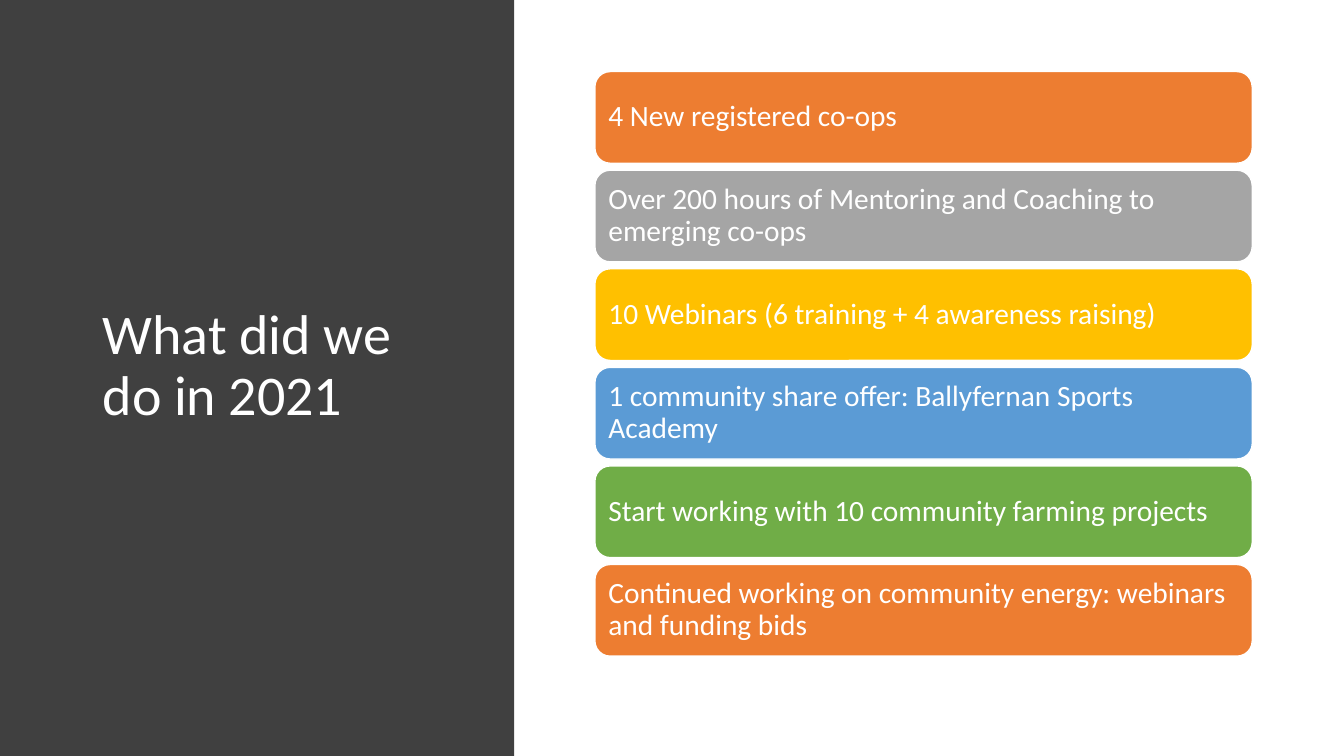
from pptx import Presentation
from pptx import util as u
from pptx.dml.color import RGBColor
from pptx.enum import shapes, text

PX = u.Inches(1) // 100

WHITE = RGBColor(0xFF, 0xFF, 0xFF)
CHARCOAL = RGBColor(0x40, 0x40, 0x40)
ORANGE = RGBColor(0xED, 0x7D, 0x31)
GREY = RGBColor(0xA5, 0xA5, 0xA5)
GOLD = RGBColor(0xFF, 0xC0, 0x00)
BLUE = RGBColor(0x5B, 0x9B, 0xD5)
GREEN = RGBColor(0x70, 0xAD, 0x47)

ACHIEVEMENTS = [
    ("4 New registered co-ops", ORANGE),
    ("Over 200 hours of Mentoring and Coaching to emerging co-ops", GREY),
    ("10 Webinars (6 training + 4 awareness raising)", GOLD),
    ("1 community share offer: Ballyfernan Sports Academy", BLUE),
    ("Start working with 10 community farming projects", GREEN),
    ("Continued working on community energy: webinars and funding bids", ORANGE),
]


def px(*lengths):
    return [round(length * PX) for length in lengths]


def add_block(slide, kind, box, color):
    shape = slide.shapes.add_shape(kind, *px(*box))
    shape.shadow.inherit = False
    shape.fill.solid()
    shape.fill.fore_color.rgb = color
    shape.line.fill.background()
    return shape


def write(shape, wording, size):
    frame = shape.text_frame
    frame.word_wrap = True
    frame.vertical_anchor = text.MSO_ANCHOR.MIDDLE
    paragraph = frame.paragraphs[0]
    paragraph.text = wording
    paragraph.alignment = text.PP_ALIGN.LEFT
    paragraph.line_spacing = 0.9
    paragraph.font.name = "Calibri"
    paragraph.font.size = u.Pt(size)
    paragraph.font.color.rgb = WHITE
    return frame


def title_panel(slide, box):
    left, top, width, height = box
    add_block(slide, shapes.MSO_SHAPE.RECTANGLE, box, CHARCOAL)
    title = slide.shapes.add_textbox(*px(left + 92, top + 68, width - 143, height - 158))
    write(title, "What did we do in 2021", 40)


def achievement_cards(slide, box):
    left, top, width, height = box
    card_height = 91
    pitch = (height - card_height) / (len(ACHIEVEMENTS) - 1)
    for index, (wording, color) in enumerate(ACHIEVEMENTS):
        card_box = (left, top + index * pitch, width, card_height)
        card = add_block(slide, shapes.MSO_SHAPE.ROUNDED_RECTANGLE, card_box, color)
        card.line.color.rgb = WHITE
        card.line.width = u.Pt(1)
        frame = write(card, wording, 21)
        frame.margin_left, frame.margin_top, frame.margin_right, frame.margin_bottom = px(9, 9, 9, 9)


def main():
    presentation = Presentation()
    presentation.slide_width, presentation.slide_height = px(1333, 750)
    slide = presentation.slides.add_slide(presentation.slide_layouts[6])
    title_panel(slide, (0, 0, 510, 750))
    achievement_cards(slide, (590, 71, 652, 580))
    presentation.save("out.pptx")


if __name__ == "__main__":
    main()
